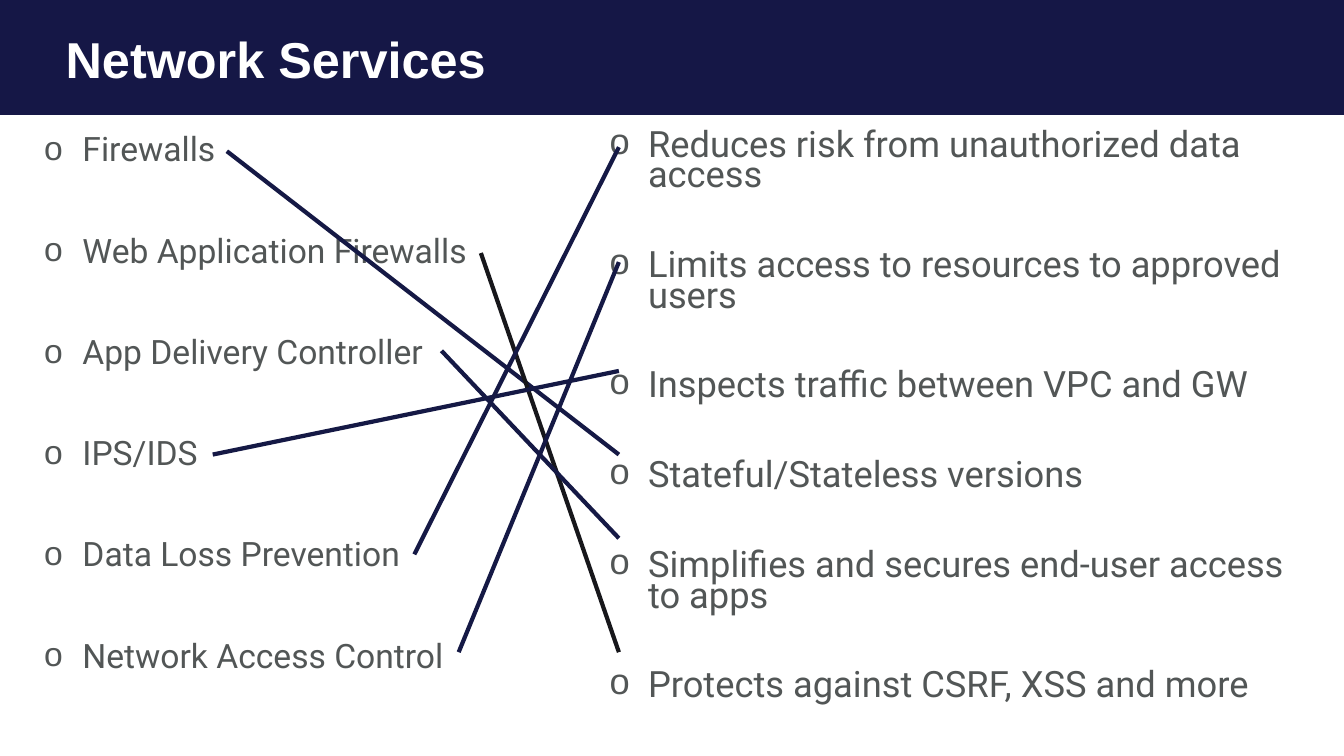
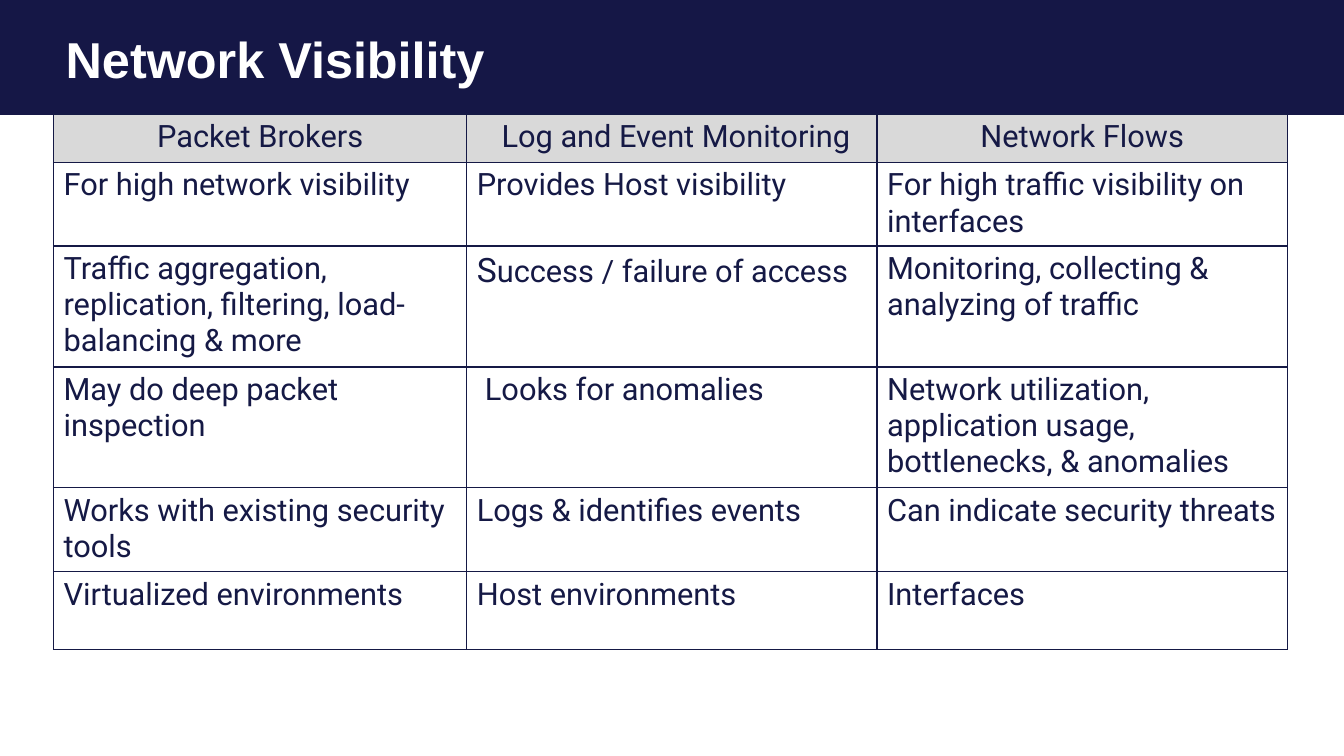
import pptx
import pptx.dml.color
import pptx.enum.shapes
import pptx.enum.text
import pptx.oxml.ns
import pptx.util
from lxml import etree


def color(value):
    """Turn a hex string into a colour."""
    return pptx.dml.color.RGBColor.from_string(value)


def add_element(parent, tag, **attributes):
    """Append a DrawingML element to its parent."""
    return etree.SubElement(parent, pptx.oxml.ns.qn(tag), attributes)


class Composer:
    """Hold the style and the current slide; lengths are percent of the slide."""

    BAND = "151746"
    NAVY = "151945"
    BLACK = "17171B"
    GRAY = "525656"
    HEADER = "D9D9D9"
    WHITE = "FFFFFF"
    TITLE_FONT = "Arial"
    BODY_FONT = "Roboto"
    BAND_HEIGHT = 15.2

    def __init__(self):
        """Open a wide deck."""
        self.deck = pptx.Presentation()
        self.deck.slide_width = pptx.util.Inches(13.33)
        self.deck.slide_height = pptx.util.Inches(7.5)
        self.layout = self.deck.slide_layouts[5]
        self.slide = None

    def across(self, share):
        """Convert a share of the width."""
        return round(self.deck.slide_width * share / 100)

    def down(self, share):
        """Convert a share of the height."""
        return round(self.deck.slide_height * share / 100)

    def area(self, left, top, width, height):
        """Convert a rectangle given in shares."""
        return self.across(left), self.down(top), self.across(width), self.down(height)

    def add_span(self, para, text, size, shade, font=BODY_FONT, bold=False):
        """Add one formatted run."""
        span = para.add_run()
        span.text = text
        span.font.name = font
        span.font.size = pptx.util.Pt(size)
        span.font.bold = bold
        span.font.color.rgb = color(shade)

    def add_band(self):
        """Place the title band on the shared layout."""
        band = self.slide.shapes.add_shape(
            pptx.enum.shapes.MSO_SHAPE.RECTANGLE, *self.area(0, 0, 100, self.BAND_HEIGHT))
        band.shadow.inherit = False
        band.fill.solid()
        band.fill.fore_color.rgb = color(self.BAND)
        band.line.fill.background()
        self.layout.shapes._spTree.insert(2, band._element)

    def add_slide(self, heading):
        """Start a slide with its title."""
        first = self.slide is None
        self.slide = self.deck.slides.add_slide(self.layout)
        if first:
            self.add_band()
        title = self.slide.shapes.title
        title.left, title.top, title.width, title.height = self.area(
            4.13, 0.67, 91.65, self.BAND_HEIGHT)
        frame = title.text_frame
        frame.auto_size = pptx.enum.text.MSO_AUTO_SIZE.NONE
        frame.vertical_anchor = pptx.enum.text.MSO_ANCHOR.MIDDLE
        para = frame.paragraphs[0]
        para.alignment = pptx.enum.text.PP_ALIGN.LEFT
        para.line_spacing = 0.9
        self.add_span(para, heading, 36, self.WHITE, self.TITLE_FONT, True)

    def add_bullets(self, place, items, size, line_spacing, gap):
        """Add a bulleted list with even gaps."""
        frame = self.slide.shapes.add_textbox(*self.area(*place)).text_frame
        frame.word_wrap = True
        indent = pptx.util.Inches(0.38)
        for index, item in enumerate(items):
            para = frame.add_paragraph() if index else frame.paragraphs[0]
            properties = para._p.get_or_add_pPr()
            properties.set("marL", str(indent))
            properties.set("indent", str(-indent))
            add_element(properties, "a:buFont", typeface=self.TITLE_FONT)
            add_element(properties, "a:buChar", char="o")
            para.line_spacing = line_spacing
            para.space_before = pptx.util.Pt(gap if index else 0)
            self.add_span(para, item, size, self.GRAY)

    def add_line(self, start, end, shade):
        """Join two points."""
        line = self.slide.shapes.add_connector(
            pptx.enum.shapes.MSO_CONNECTOR.STRAIGHT,
            self.across(start[0]), self.down(start[1]),
            self.across(end[0]), self.down(end[1]))
        line.line.color.rgb = color(shade)
        line.line.width = pptx.util.Pt(3)
        add_element(line._element.spPr, "a:effectLst")

    def add_borders(self, cell):
        """Draw the four edges of a cell."""
        properties = cell._tc.get_or_add_tcPr()
        for side in ("a:lnL", "a:lnR", "a:lnT", "a:lnB"):
            edge = add_element(properties, side, w=str(pptx.util.Pt(1)))
            add_element(add_element(edge, "a:solidFill"), "a:srgbClr", val=self.NAVY)

    def add_table(self, left, top, widths, heights, rows, indented):
        """Add a ruled table with a shaded header row."""
        table = self.slide.shapes.add_table(
            len(heights), len(widths),
            *self.area(left, top, sum(widths), sum(heights))).table
        table.horz_banding = table.first_row = False
        for column, width in zip(table.columns, widths):
            column.width = self.across(width)
        for row, height in zip(table.rows, heights):
            row.height = self.down(height)
        for row_index, texts in enumerate(rows):
            for column_index, spans in enumerate(texts):
                cell = table.cell(row_index, column_index)
                self.add_borders(cell)
                para = cell.text_frame.paragraphs[0]
                if row_index:
                    cell.fill.background()
                else:
                    cell.fill.solid()
                    cell.fill.fore_color.rgb = color(self.HEADER)
                    para.alignment = pptx.enum.text.PP_ALIGN.CENTER
                if spans in indented:
                    cell.margin_left = pptx.util.Inches(0.18)
                if isinstance(spans, str):
                    spans = [(spans, 22)]
                for text, size in spans:
                    self.add_span(para, text, size, self.NAVY)


def build_services(composer):
    """Match each service with its benefit."""
    services = [
        ("Firewalls", (16.88, 20), 3, composer.NAVY),
        ("Web Application Firewalls", (35.78, 33.47), 5, composer.BLACK),
        ("App Delivery Controller", (32.85, 46.4), 4, composer.NAVY),
        ("IPS/IDS", (15.83, 60.13), 2, composer.NAVY),
        ("Data Loss Prevention", (30.83, 73.33), 0, composer.NAVY),
        ("Network Access Control", (34.13, 86.27), 1, composer.NAVY),
    ]
    benefits = [
        ("Reduces risk from unauthorized data access", 19.47),
        ("Limits access to resources to approved users", 34.67),
        ("Inspects traffic between VPC and GW", 49.07),
        ("Stateful/Stateless versions", 60.13),
        ("Simplifies and secures end-user access to apps", 71.2),
        ("Protects against CSRF, XSS and more", 86.27),
    ]
    composer.add_slide("Network Services")
    composer.add_bullets((2.55, 16.93, 36.83, 68.4),
                         [service[0] for service in services], 24, 0.9, 46.4)
    composer.add_bullets((44.63, 16.93, 52.88, 78.67),
                         [benefit[0] for benefit in benefits], 25.9, 0.7, 42.4)
    for _, start, match, shade in services:
        composer.add_line(start, (46.05, benefits[match][1]), shade)


def build_visibility(composer):
    """Compare three sources of network visibility."""
    rows = [
        ("Packet Brokers", "Log and Event Monitoring", "Network Flows"),
        ("For high network visibility", "Provides Host visibility",
         "For high traffic visibility on interfaces"),
        ("Traffic aggregation, replication, filtering, load-balancing & more",
         [("S", 24), ("uccess / failure of access", 22)],
         "Monitoring, collecting & analyzing of traffic"),
        ("May do deep packet inspection", "Looks for anomalies",
         "Network utilization, application usage, bottlenecks, & anomalies"),
        ("Works with existing security tools", "Logs & identifies events",
         "Can indicate security threats"),
        ("Virtualized environments", "Host environments", "Interfaces"),
    ]
    composer.add_slide("Network Visibility")
    composer.add_table(3.98, 15.07, (30.75, 30.53, 30.53),
                       (6.4, 11.07, 16, 16, 11.07, 10.27), rows,
                       ("Log and Event Monitoring", "Looks for anomalies"))


def main():
    """Build and save the deck."""
    composer = Composer()
    build_services(composer)
    build_visibility(composer)
    composer.deck.save("out.pptx")


if __name__ == "__main__":
    main()
